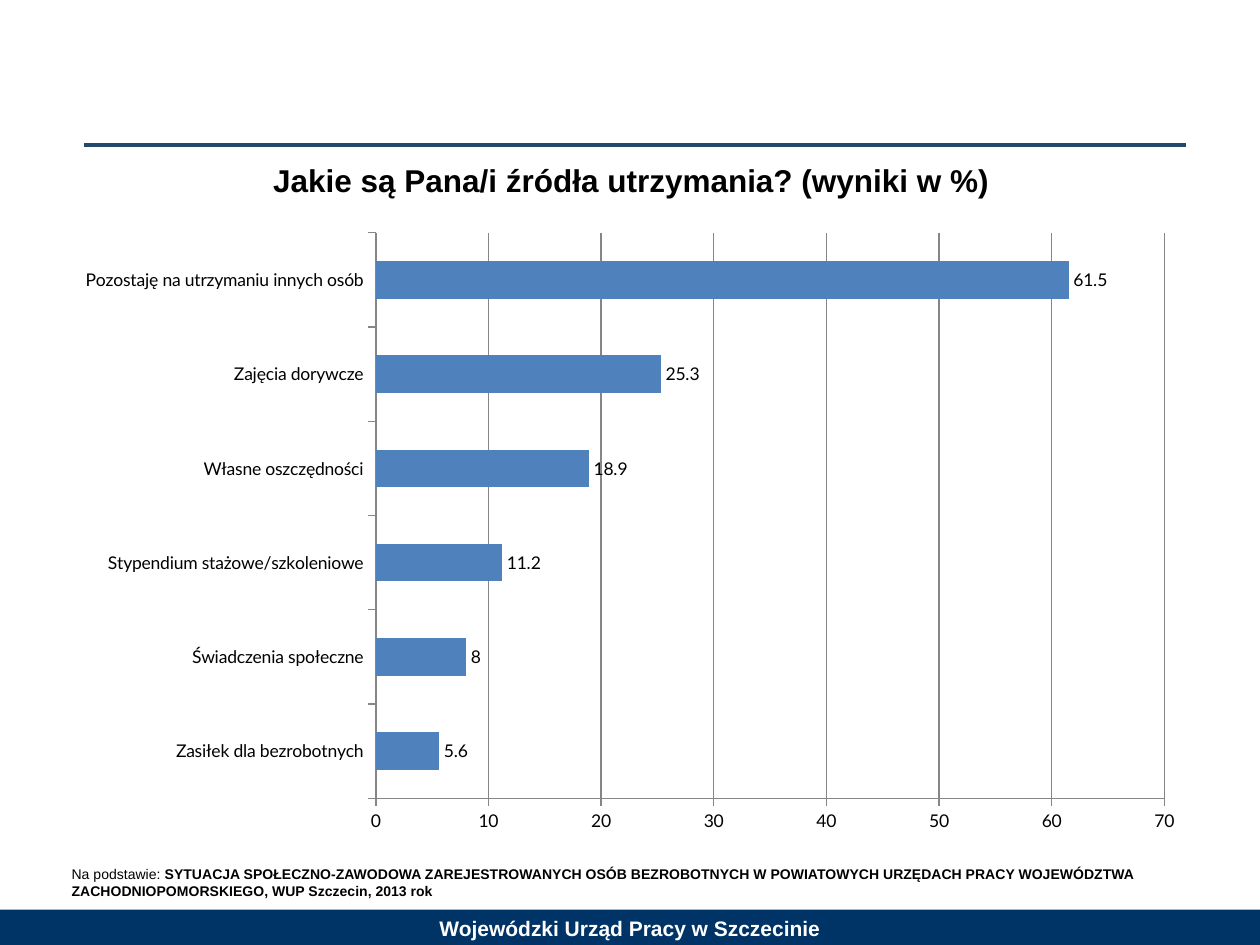
from pptx import Presentation
from pptx.chart.data import CategoryChartData
from pptx.dml.color import RGBColor
from pptx.enum.chart import XL_CHART_TYPE as Kind, XL_LABEL_POSITION as Spot, XL_TICK_MARK as Tick
from pptx.enum.shapes import MSO_CONNECTOR as Link, MSO_SHAPE as Shape
from pptx.enum.text import MSO_ANCHOR as Anchor, PP_ALIGN as Align
from pptx.oxml import parse_xml
from pptx.oxml.ns import nsdecls
from pptx.util import Inches, Pt

TITLE = "Jakie są Pana/i źródła utrzymania? (wyniki w %)"
FOOTER = "Wojewódzki Urząd Pracy w Szczecinie"
LEAD = "Na podstawie: "
SOURCE = ("SYTUACJA SPOŁECZNO-ZAWODOWA ZAREJESTROWANYCH OSÓB BEZROBOTNYCH "
          "W POWIATOWYCH URZĘDACH PRACY WOJEWÓDZTWA ZACHODNIOPOMORSKIEGO, "
          "WUP Szczecin, 2013 rok")
INCOME = [
    ("Zasiłek dla bezrobotnych", 5.6),
    ("Świadczenia społeczne", 8),
    ("Stypendium stażowe/szkoleniowe", 11.2),
    ("Własne oszczędności", 18.9),
    ("Zajęcia dorywcze", 25.3),
    ("Pozostaję na utrzymaniu innych osób", 61.5),
]

THEME = {
    "font": "Arial", "chart font": "Lato",
    "ink": "000000", "light": "FFFFFF", "band": "003366",
    "rule": "24496E", "bar": "4F81BD", "grid": "868686",
    "title": 18, "footer": 12, "note": 8, "chart": 10,
}

# Left, top, width, height as percent of the slide
AREAS = {
    "band": (0, 96.27, 100, 3.73),
    "footer": (0, 96.27, 100, 4),
    "rule": (6.7, 15.33, 87.4, 0),
    "title": (5.1, 16.4, 90, 7.07),
    "chart": (5, 23.33, 90, 66),
    "note": (4.7, 90.93, 90.2, 4.93),
}

deck = Presentation()
deck.slide_width, deck.slide_height = Inches(10), Inches(7.5)
slide = deck.slides.add_slide(deck.slide_layouts[6])
shapes = slide.shapes


def place(name):
    sides = (deck.slide_width, deck.slide_height) * 2
    return [round(side * part / 100) for side, part in zip(sides, AREAS[name])]


def color(name):
    return RGBColor.from_string(THEME[name])


def style(font, size, face="font", ink="ink", bold=False):
    looks = {"name": THEME[face], "size": Pt(THEME[size]), "bold": bold}
    for key, value in looks.items():
        setattr(font, key, value)
    font.color.rgb = color(ink)


def write(name, runs, ink="ink", align=Align.LEFT, anchor=Anchor.TOP):
    """Add a text box; runs are (text, bold) pairs."""
    frame = shapes.add_textbox(*place(name)).text_frame
    frame.word_wrap, frame.vertical_anchor = True, anchor
    line = frame.paragraphs[0]
    line.alignment = align
    for text, bold in runs:
        run = line.add_run()
        run.text = text
        style(run.font, name, ink=ink, bold=bold)


def draw_rule():
    left, top, width, height = place("rule")
    rule = shapes.add_connector(Link.STRAIGHT, left, top, left + width, top + height)
    rule.line.color.rgb, rule.line.width = color("rule"), Pt(2)
    rule._element.spPr.append(parse_xml(f"<a:effectLst {nsdecls('a')}/>"))


def draw_chart():
    data = CategoryChartData()
    data.categories = [name for name, _ in INCOME]
    data.add_series("Series 1", [value for _, value in INCOME])
    chart = shapes.add_chart(Kind.BAR_CLUSTERED, *place("chart"), data).chart
    chart.has_legend = chart.has_title = False
    style(chart.font, "chart", "chart font")

    plot = chart.plots[0]
    plot.gap_width, plot.vary_by_categories = 150, False
    fill = plot.series[0].format.fill
    fill.solid()
    fill.fore_color.rgb = color("bar")
    plot.has_data_labels = True
    labels = plot.data_labels
    labels.show_value, labels.position = True, Spot.OUTSIDE_END
    style(labels.font, "chart", "chart font")

    cats, vals = chart.category_axis, chart.value_axis
    vals.has_major_gridlines = True
    for axis in (cats, vals):
        axis.major_tick_mark, axis.minor_tick_mark = Tick.OUTSIDE, Tick.NONE
    for part in (cats, vals, vals.major_gridlines):
        part.format.line.color.rgb, part.format.line.width = color("grid"), Pt(0.75)


band = shapes.add_shape(Shape.RECTANGLE, *place("band"))
band.shadow.inherit = False
band.fill.solid()
band.fill.fore_color.rgb = color("band")
band.line.fill.background()

write("footer", [(FOOTER, True)], "light", Align.CENTER, Anchor.MIDDLE)
draw_rule()
write("title", [(TITLE, True)], align=Align.CENTER)
draw_chart()
write("note", [(LEAD, False), (SOURCE, True)])

deck.save("out.pptx")
